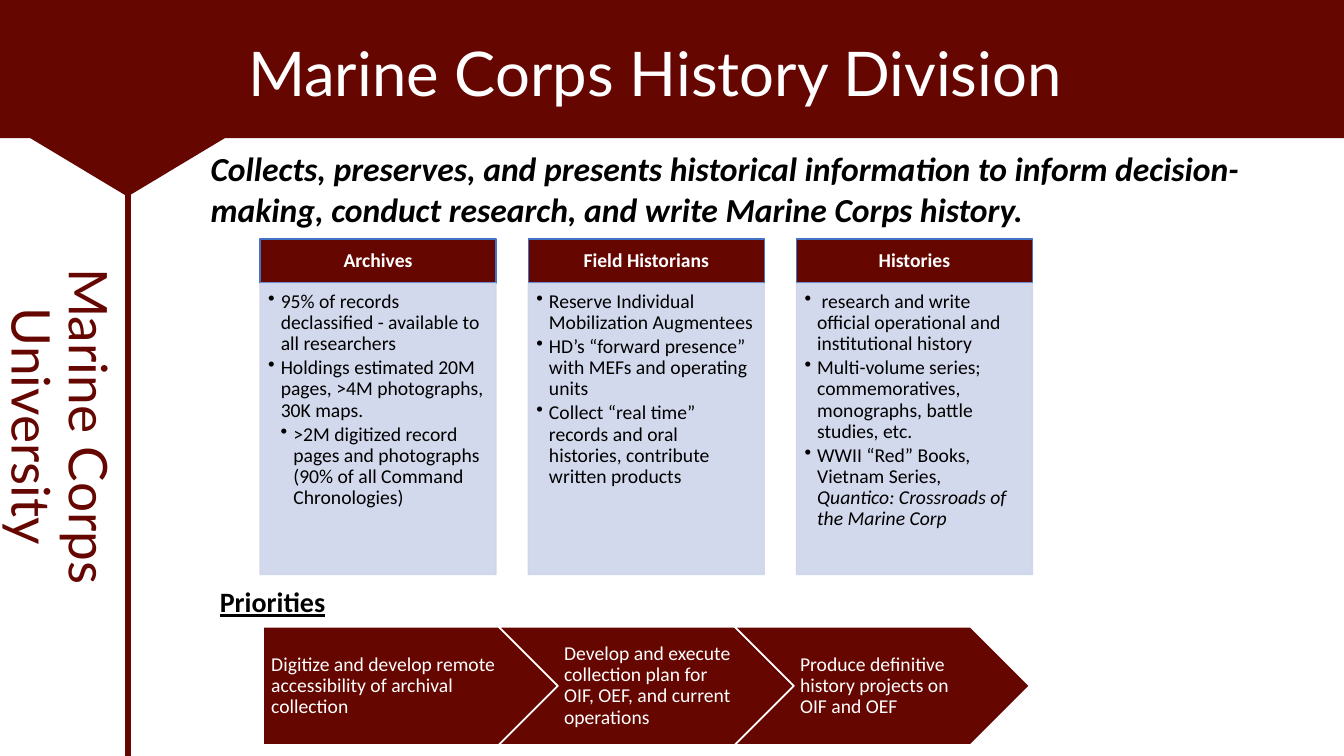
"""Build the Marine Corps History Division overview slide."""
import lxml.etree
import pptx
import pptx.dml.color
import pptx.enum.shapes
import pptx.enum.text
import pptx.oxml.ns
import pptx.util

Inches, Pt = pptx.util.Inches, pptx.util.Pt
Shape = pptx.enum.shapes.MSO_SHAPE
Align = pptx.enum.text.PP_ALIGN
Anchor = pptx.enum.text.MSO_ANCHOR
qn = pptx.oxml.ns.qn

MAROON, WHITE, BLACK = "650600", "FFFFFF", "000000"
BLUE, LAVENDER = "4472C4", "CFD5EA"

HEADLINE = "Marine Corps History Division"
SIDEBAR = "Marine Corps University"
MISSION = (
    "Collects, preserves, and presents historical information to inform "
    "decision-making, conduct research, and write Marine Corps history."
)
BRANCHES = [
    ("Archives", [
        (1, "95% of records declassified - available to all researchers", ""),
        (1, "Holdings estimated 20M pages, >4M photographs, 30K maps.", ""),
        (2, ">2M digitized record pages and photographs "
            "(90% of all Command Chronologies)", ""),
    ]),
    ("Field Historians", [
        (1, "Reserve Individual Mobilization Augmentees", ""),
        (1, "HD’s “forward presence” with MEFs and operating units", ""),
        (1, "Collect “real time” records and oral histories, "
            "contribute written products", ""),
    ]),
    ("Histories", [
        (1, " research and write official operational and "
            "institutional history", ""),
        (1, "Multi-volume series; commemoratives, monographs, "
            "battle studies, etc.", ""),
        (1, "WWII “Red” Books, Vietnam Series, ",
            "Quantico: Crossroads of the Marine Corp"),
    ]),
]
PRIORITIES_HEADING = "Priorities"
PRIORITIES = [
    "Digitize and develop remote accessibility of archival collection",
    "Develop and execute collection plan for OIF, OEF, and current operations",
    "Produce definitive history projects on OIF and OEF",
]

CARD_LEFT, CARD_STEP, CARD_WIDTH = 2.58, 2.66, 2.34
CARD_TOP, HEADER_HEIGHT, BODY_HEIGHT = 2.37, 0.44, 2.89
ARROW_LEFT, ARROW_STEP, ARROW_WIDTH = 2.61, 2.34, 2.92
BULLET_INDENT = 0.125


def rgb(color):
    return pptx.dml.color.RGBColor.from_string(color)


def place(part, left, top, width, height):
    part.left, part.top = Inches(left), Inches(top)
    part.width, part.height = Inches(width), Inches(height)


def set_indent(paragraph, margin, hanging=0, bullet=None):
    properties = paragraph._p.get_or_add_pPr()
    properties.set("marL", str(Inches(margin)))
    properties.set("indent", str(-Inches(hanging)))
    if bullet:
        lxml.etree.SubElement(properties, qn("a:buChar")).set("char", bullet)
    else:
        lxml.etree.SubElement(properties, qn("a:buNone"))


def style(paragraph, size, color, font="Calibri", spacing=0.9, align=Align.LEFT):
    paragraph.alignment = align
    paragraph.line_spacing = spacing
    paragraph.space_before = Pt(0)
    for run in paragraph.runs:
        run.font.name, run.font.size = font, Pt(size)
        run.font.color.rgb = rgb(color)


def set_frame(part, insets=(0.1, 0.05, 0.1, 0.05), anchor=Anchor.MIDDLE):
    frame = part.text_frame
    frame.auto_size = pptx.enum.text.MSO_AUTO_SIZE.NONE
    frame.word_wrap = True
    frame.vertical_anchor = anchor
    (frame.margin_left, frame.margin_top,
     frame.margin_right, frame.margin_bottom) = map(Inches, insets)
    return frame


def add_block(preset, left, top, width, height, fill, outline=None):
    block = slide.shapes.add_shape(
        preset, Inches(left), Inches(top), Inches(width), Inches(height))
    block.shadow.inherit = False
    block.fill.solid()
    block.fill.fore_color.rgb = rgb(fill)
    if outline:
        block.line.color.rgb = rgb(outline)
        block.line.width = Pt(1)
    else:
        block.line.fill.background()
    return block


def add_label(left, top, width, height, text, size, insets, margin=0):
    label = slide.shapes.add_textbox(
        Inches(left), Inches(top), Inches(width), Inches(height))
    frame = set_frame(label, insets, Anchor.TOP)
    frame.text = text
    set_indent(frame.paragraphs[0], margin)
    style(frame.paragraphs[0], size, BLACK, spacing=1.0)
    font = frame.paragraphs[0].runs[0].font
    font.bold = True
    return font


def add_card(left, heading, points):
    header = add_block(Shape.RECTANGLE, left, CARD_TOP, CARD_WIDTH,
                       HEADER_HEIGHT, MAROON, BLUE)
    frame = set_frame(header, (0.11, 0.06, 0.11, 0.06))
    frame.text = heading
    style(frame.paragraphs[0], 14, WHITE, align=Align.CENTER)
    frame.paragraphs[0].runs[0].font.bold = True

    body = add_block(Shape.RECTANGLE, left, CARD_TOP + HEADER_HEIGHT,
                     CARD_WIDTH, BODY_HEIGHT, LAVENDER, LAVENDER)
    for tint in body.element.spPr.iter(qn("a:srgbClr")):
        lxml.etree.SubElement(tint, qn("a:alpha")).set("val", "90000")
    frame = set_frame(body, (0.08, 0.08, 0.11, 0.12), Anchor.TOP)
    for index, (level, plain, italic) in enumerate(points):
        point = frame.add_paragraph() if index else frame.paragraphs[0]
        point.text = plain
        if italic:
            publication = point.add_run()
            publication.text = italic
            publication.font.italic = True
        set_indent(point, level * BULLET_INDENT, BULLET_INDENT, "•")
        style(point, 14, BLACK)
        point.space_after = Pt(2)


deck = pptx.Presentation()
deck.slide_width, deck.slide_height = Inches(13.33), Inches(7.5)
slide = deck.slides.add_slide(deck.slide_layouts[1])
headline, sidebar = slide.placeholders

add_block(Shape.RECTANGLE, 0, 0, 13.33, 1.37, MAROON)
pointer = add_block(Shape.ISOSCELES_TRIANGLE, 0.3, 1.37, 1.93, 0.58, MAROON)
pointer.rotation = 180
divider = slide.shapes.add_connector(
    pptx.enum.shapes.MSO_CONNECTOR.STRAIGHT,
    Inches(1.27), Inches(1.79), Inches(1.27), Inches(7.5))
divider.line.color.rgb = rgb(MAROON)
divider.line.width = Pt(4)
lxml.etree.SubElement(divider.element.spPr, qn("a:effectLst"))

place(headline, 2.36, 0.15, 10.45, 1.22)
place(sidebar, -2.01, 3.69, 5.16, 1.08)
sidebar.rotation = 90
for placeholder, text, size, color, align in (
        (headline, HEADLINE, 44, WHITE, Align.LEFT),
        (sidebar, SIDEBAR, 38, MAROON, Align.CENTER)):
    frame = set_frame(placeholder)
    frame.text = text
    set_indent(frame.paragraphs[0], 0)
    style(frame.paragraphs[0], size, color, "Lato", align=align)
slide.shapes.element.append(headline.element)

mission_font = add_label(1.99, 1.42, 11.35, 0.91, MISSION, 24,
                         (0.1, 0.05, 0.1, 0.05))
mission_font.italic = True
heading_font = add_label(1.99, 5.75, 9.01, 0.44, PRIORITIES_HEADING, 20,
                         (0, 0.05, 0, 0.05), margin=0.19)
heading_font.underline = True

for column, (heading, points) in enumerate(BRANCHES):
    add_card(CARD_LEFT + column * CARD_STEP, heading, points)

for step, priority in enumerate(PRIORITIES):
    arrow = add_block(Shape.CHEVRON if step else Shape.PENTAGON,
                      ARROW_LEFT + step * ARROW_STEP, 6.22, ARROW_WIDTH, 1.17,
                      MAROON, WHITE)
    frame = set_frame(arrow, (0.06 if step else 0.08, 0.04, 0.02, 0.04))
    frame.text = priority
    style(frame.paragraphs[0], 14, WHITE)

deck.save("out.pptx")
